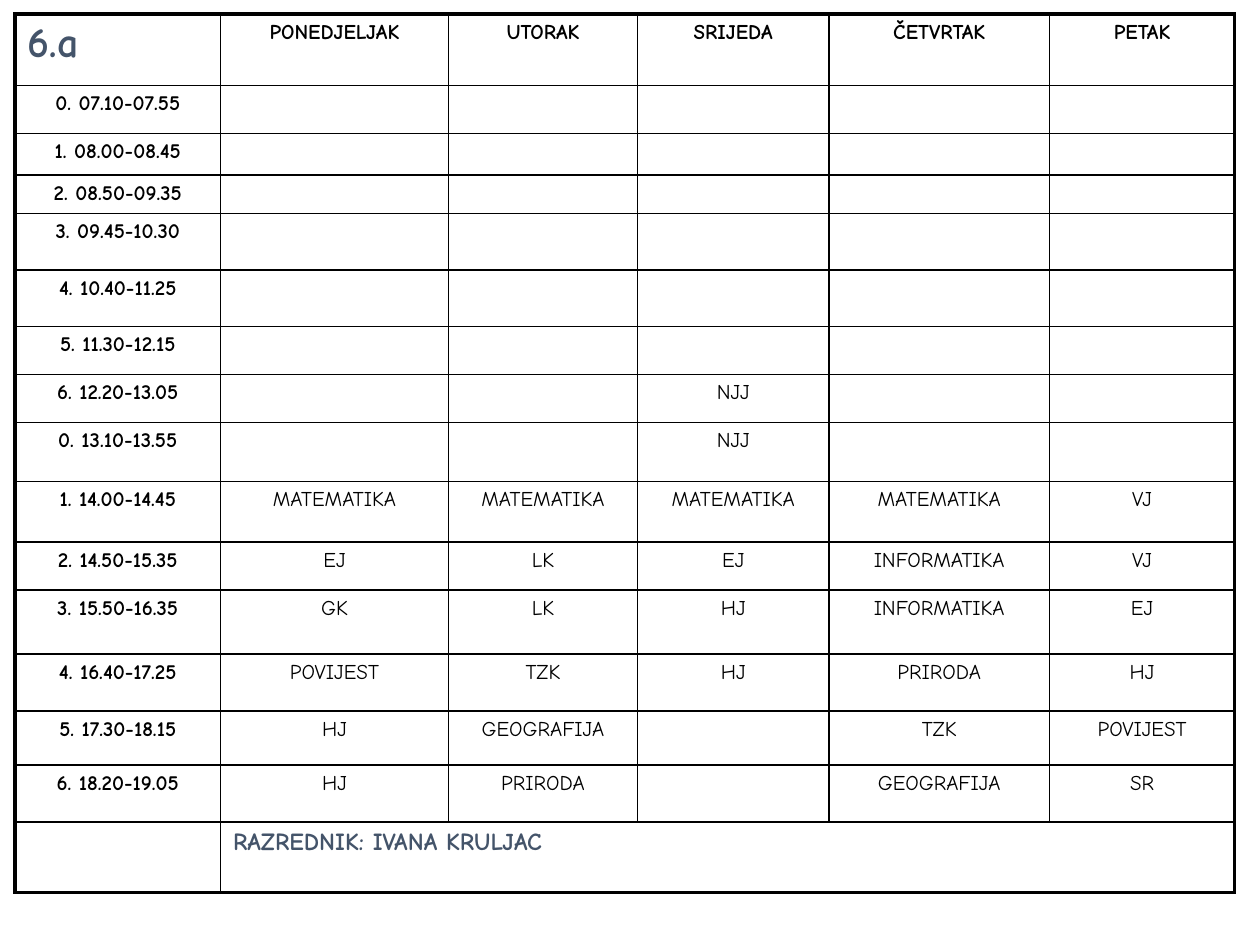
from lxml.etree import SubElement
from pptx import Presentation
from pptx.dml.color import RGBColor
from pptx.enum.text import PP_ALIGN as Align
from pptx.oxml.ns import qn
from pptx.util import Inches, Pt

FONT = "Comic Neue"
BLACK, SLATE = "000000", "44546A"
THIN, THICK = 1, 2.25


def write(cell, text, size=12, color=BLACK, bold=False, align=Align.CENTER):
    para = cell.text_frame.paragraphs[0]
    para.alignment = align
    if not text:
        SubElement(para._p, qn("a:endParaRPr"), sz=str(size * 100))
        return
    span = para.add_run()
    span.text = text
    span.font.name = FONT
    span.font.size = Pt(size)
    span.font.bold = bold
    span.font.color.rgb = RGBColor.from_string(color)


def draw_borders(cell, **widths):
    properties = cell._tc.get_or_add_tcPr()
    for side, width in widths.items():
        line = SubElement(properties, qn(f"a:ln{side}"), w=str(Pt(width)))
        fill = SubElement(line, qn("a:solidFill"))
        SubElement(fill, qn("a:srgbClr"), val=BLACK)


column_widths = [1.63, 1.81, 1.5, 1.52, 1.75, 1.47]
row_heights = [0.57, 0.38, 0.33, 0.29, 0.45, 0.45, 0.38, 0.38,
               0.47, 0.48, 0.38, 0.51, 0.45, 0.43, 0.45, 0.56]
days = ["PONEDJELJAK", "UTORAK", "SRIJEDA", "ČETVRTAK", "PETAK"]
free = [""] * len(days)
lessons = [
    ("0. 07.10-07.55", free),
    ("1. 08.00-08.45", free),
    ("2. 08.50-09.35", free),
    ("3. 09.45-10.30", free),
    ("4. 10.40-11.25", free),
    ("5. 11.30-12.15", free),
    ("6. 12.20-13.05", ["", "", "NJJ", "", ""]),
    ("0. 13.10-13.55", ["", "", "NJJ", "", ""]),
    ("1. 14.00-14.45", ["MATEMATIKA"] * 4 + ["VJ"]),
    ("2. 14.50-15.35", ["EJ", "LK", "EJ", "INFORMATIKA", "VJ"]),
    ("3. 15.50-16.35", ["GK", "LK", "HJ", "INFORMATIKA", "EJ"]),
    ("4. 16.40-17.25", ["POVIJEST", "TZK", "HJ", "PRIRODA", "HJ"]),
    ("5. 17.30-18.15", ["HJ", "GEOGRAFIJA", "", "TZK", "POVIJEST"]),
    ("6. 18.20-19.05", ["HJ", "PRIRODA", "", "GEOGRAFIJA", "SR"]),
]

deck = Presentation()
deck.slide_width, deck.slide_height = Inches(10), Inches(7.5)
page = deck.slides.add_slide(deck.slide_layouts[6])

last_row, last_column = len(row_heights) - 1, len(column_widths) - 1
timetable = page.shapes.add_table(
    len(row_heights), len(column_widths), Inches(0.12), Inches(0.11),
    Inches(sum(column_widths)), Inches(sum(row_heights))).table
timetable.first_row = False
timetable.horz_banding = False
for column, width in zip(timetable.columns, column_widths):
    column.width = Inches(width)
for row, height in zip(timetable.rows, row_heights):
    row.height = Inches(height)

for r in range(last_row + 1):
    for c in range(last_column + 1):
        cell = timetable.cell(r, c)
        draw_borders(cell,
                     L=THICK if c == 0 else THIN,
                     R=THICK if c == last_column else THIN,
                     T=THICK if r == 0 else THIN,
                     B=THICK if r == last_row else THIN)
        cell.fill.background()

write(timetable.cell(0, 0), "6.a", size=24, color=SLATE, bold=True, align=Align.LEFT)
for c, day in enumerate(days, 1):
    write(timetable.cell(0, c), day, bold=True)
for r, (time, subjects) in enumerate(lessons, 1):
    write(timetable.cell(r, 0), time, bold=True)
    for c, subject in enumerate(subjects, 1):
        write(timetable.cell(r, c), subject)

teacher = timetable.cell(last_row, 1)
teacher.merge(timetable.cell(last_row, last_column))
draw_borders_right = teacher._tc.tcPr.find(qn("a:lnR"))
draw_borders_right.set("w", str(Pt(THICK)))
write(teacher, "RAZREDNIK: IVANA KRULJAC", size=14, color=SLATE, bold=True, align=Align.LEFT)

deck.save("out.pptx")
